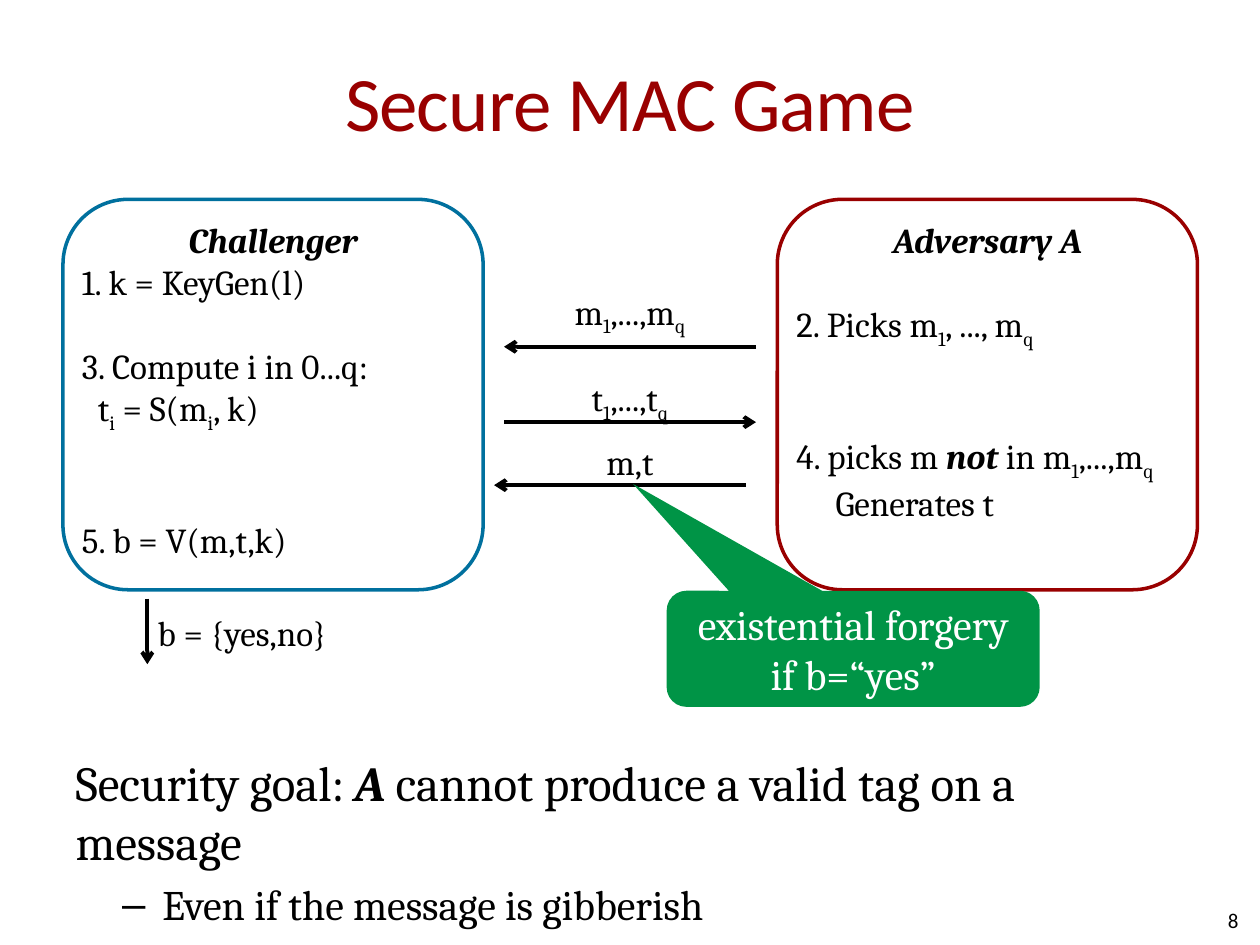
import pptx
import pptx.dml.color
import pptx.enum.shapes
import pptx.enum.text
import pptx.oxml
import pptx.oxml.ns
import pptx.util

Cm = pptx.util.Cm
Pt = pptx.util.Pt
ALIGN = pptx.enum.text.PP_ALIGN
ANCHOR = pptx.enum.text.MSO_ANCHOR
SHAPE = pptx.enum.shapes.MSO_SHAPE

BLACK, WHITE = "000000", "FFFFFF"
RED, BLUE, GREEN = "990000", "00709E", "009446"


def color(hex_code):
    return pptx.dml.color.RGBColor.from_string(hex_code)


def add_xml(parent, markup):
    namespace = pptx.oxml.ns.nsdecls("a")
    parent.append(pptx.oxml.parse_xml(markup.replace("/>", f" {namespace}/>")))


def add_spans(para, text):
    """Write text in which _x_ is a subscript and *x* is bold italic."""
    for part_index, part in enumerate(text.split("_")):
        for piece_index, piece in enumerate(part.split("*")):
            if not piece:
                continue
            span = para.add_run()
            span.text = piece
            if part_index % 2:
                span._r.get_or_add_rPr().set("baseline", "-25000")
            if piece_index % 2:
                span.font.bold = span.font.italic = True


def format_para(para, size=20, font="Cambria", ink=BLACK, align=ALIGN.LEFT,
                before=0, margin=0, indent=0):
    para.font.size = Pt(size)
    para.font.name = font
    para.font.color.rgb = color(ink)
    para.alignment = align
    para.space_before = Pt(before)
    properties = para._p.get_or_add_pPr()
    properties.set("marL", str(Cm(margin)))
    properties.set("indent", str(Cm(indent)))


def write(frame, lines, **common):
    """Fill a text frame from (text, paragraph format) pairs."""
    for index, (text, own) in enumerate(lines):
        para = frame.add_paragraph() if index else frame.paragraphs[0]
        add_spans(para, text)
        format_para(para, **{**common, **own})


def set_frame(frame, anchor=ANCHOR.TOP, wrap=True, inset=0):
    """Set the layout of a text frame; None keeps the default insets."""
    frame.auto_size = pptx.enum.text.MSO_AUTO_SIZE.NONE
    frame.vertical_anchor = anchor
    frame.word_wrap = wrap
    if inset is not None:
        frame.margin_left = frame.margin_right = Cm(inset)
        frame.margin_top = frame.margin_bottom = Cm(inset)


def place(shape, left, top, width, height):
    shape.left, shape.top = Cm(left), Cm(top)
    shape.width, shape.height = Cm(width), Cm(height)


def add_label(slide, area, text, **layout):
    box = slide.shapes.add_textbox(*map(Cm, area))
    set_frame(box.text_frame, wrap=False, inset=layout.pop("inset", 0),
              anchor=layout.pop("anchor", ANCHOR.TOP))
    write(box.text_frame, [(text, layout)])


def add_panel(slide, kind, area, fill, outline, lines, anchor=ANCHOR.TOP, **common):
    panel = slide.shapes.add_shape(kind, *map(Cm, area))
    panel.shadow.inherit = False
    panel.fill.solid()
    panel.fill.fore_color.rgb = color(fill)
    if outline:
        panel.line.color.rgb = color(outline)
        panel.line.width = Pt(2)
    else:
        panel.line.fill.background()
    set_frame(panel.text_frame, anchor)
    write(panel.text_frame, lines, **common)
    return panel


def add_arrow(slide, start, end):
    arrow = slide.shapes.add_connector(
        pptx.enum.shapes.MSO_CONNECTOR.STRAIGHT, *map(Cm, start + end))
    arrow.line.color.rgb = color(BLACK)
    arrow.line.width = Pt(2.25)
    add_xml(arrow.line._get_or_add_ln(), '<a:tailEnd type="arrow"/>')
    add_xml(arrow._element.spPr, "<a:effectLst/>")


def fill_title(title):
    place(title, 1.27, 0.43, 22.86, 3.18)
    set_frame(title.text_frame, ANCHOR.MIDDLE)
    write(title.text_frame, [("Secure MAC Game", {})],
          size=44, font="Calibri", ink=RED, align=ALIGN.CENTER)
    title.text_frame.paragraphs[0].runs[0]._r.get_or_add_rPr().set("spc", "-50")


def fill_goal(body):
    place(body, 1.27, 15.04, 22.86, 3.81)
    set_frame(body.text_frame, inset=None)
    write(body.text_frame, [
        ("Security goal: *A* cannot produce a valid tag on a message",
         {"size": 28, "before": 5.6}),
        ("Even if the message is gibberish",
         {"size": 24, "before": 4.8, "margin": 1.75, "indent": -0.81}),
    ])
    goal, detail = body.text_frame.paragraphs
    detail.level = 1
    add_xml(goal._p.get_or_add_pPr(), "<a:buNone/>")
    add_xml(detail._p.get_or_add_pPr(), '<a:buChar char="–"/>')
    for para in (goal, detail):
        properties = para._p.get_or_add_pPr()
        properties.append(properties.find(pptx.oxml.ns.qn("a:defRPr")))


def add_players(slide):
    heading = {"align": ALIGN.CENTER}
    players = [
        (1.27, BLUE, [
            ("*Challenger*", heading),
            ("1. k = KeyGen(l)", {}),
            ("3. Compute i in 0...q:", {"before": 24}),
            ("t_i_ = S(m_i_, k)", {"margin": 0.32}),
            ("5. b = V(m,t,k)", {"before": 48}),
        ]),
        (15.67, RED, [
            ("*Adversary A*", heading),
            ("2. Picks m_1_, ..., m_q_", {"before": 24}),
            ("4. picks m *not* in m_1_,...,m_q_", {"before": 48}),
            ("Generates t", {"margin": 0.79}),
        ]),
    ]
    for left, outline, lines in players:
        add_panel(slide, SHAPE.ROUNDED_RECTANGLE, (left, 4.02, 8.47, 7.87),
                  WHITE, outline, lines)


def add_messages(slide):
    messages = [
        (15.24, 10.16, 6.99, 5.72, "m_1_,...,m_q_"),
        (10.16, 15.24, 8.51, 7.47, "t_1_,...,t_q_"),
        (15.04, 9.96, 9.78, 8.76, "m,t"),
    ]
    for start, end, arrow_top, label_top, text in messages:
        add_arrow(slide, (start, arrow_top), (end, arrow_top))
        add_label(slide, (11.43, label_top, 2.54, 1.07), text,
                  align=ALIGN.CENTER, inset=0.13)


def add_verdict(slide):
    add_arrow(slide, (2.97, 12.07), (2.97, 13.39))
    add_label(slide, (3.18, 12.32, 3.58, 0.86), "b = {yes,no}")
    callout = add_panel(
        slide, SHAPE.ROUNDED_RECTANGULAR_CALLOUT, (13.44, 11.91, 7.52, 2.34),
        GREEN, None, [("existential forgery", {}), ("if b=“yes”", {})],
        anchor=ANCHOR.MIDDLE, size=24, ink=WHITE, align=ALIGN.CENTER)
    for index, value in enumerate((-0.59, -1.42, 0.17)):
        callout.adjustments[index] = value


def main():
    deck = pptx.Presentation()
    deck.slide_width, deck.slide_height = Cm(25.4), Cm(19.05)
    slide = deck.slides.add_slide(deck.slide_layouts[1])
    fill_title(slide.shapes.title)
    fill_goal(slide.placeholders[1])
    add_label(slide, (19.05, 18.03, 5.92, 1.02), "8", size=12, font="Calibri",
              align=ALIGN.RIGHT, anchor=ANCHOR.MIDDLE)
    add_players(slide)
    add_messages(slide)
    add_verdict(slide)
    deck.save("out.pptx")


if __name__ == "__main__":
    main()
